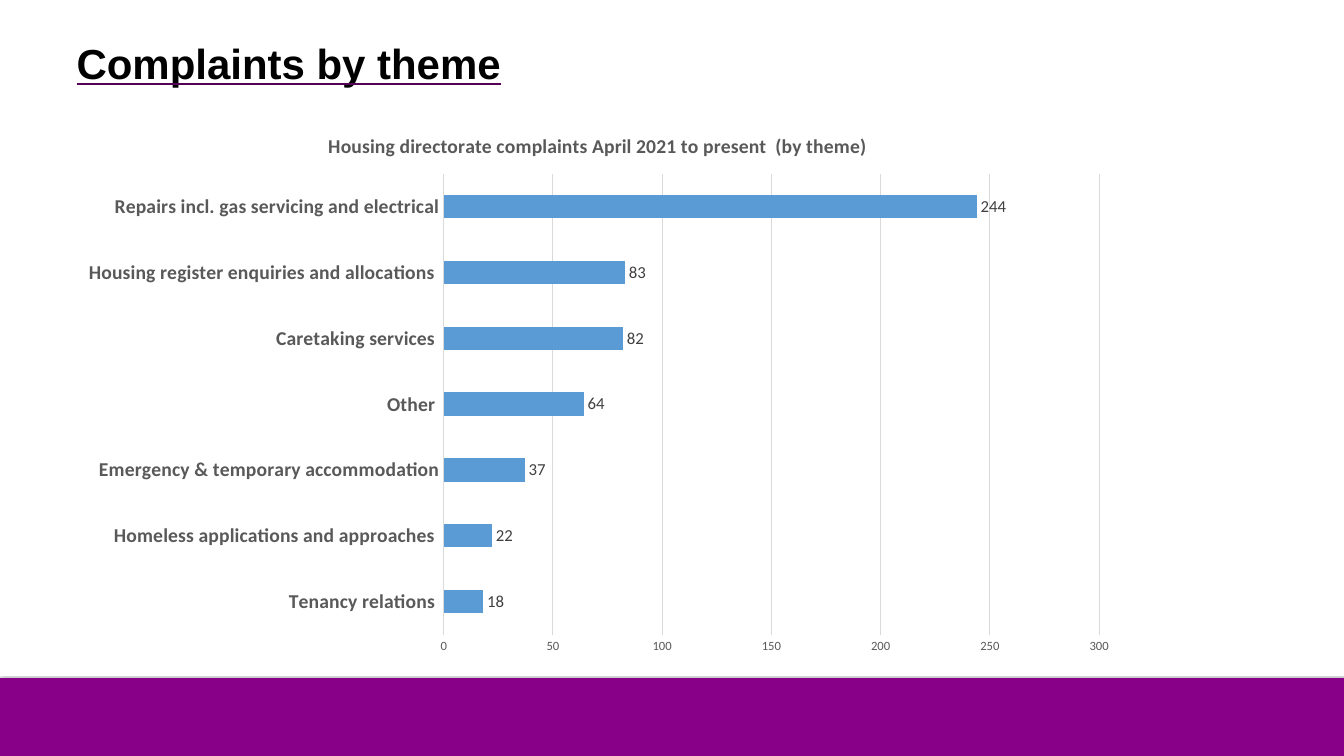
from dataclasses import dataclass

from lxml import etree
from pptx import Presentation, util as u
from pptx.chart.data import CategoryChartData
from pptx.dml.color import RGBColor
from pptx.enum import chart as ch, shapes, text
from pptx.oxml import parse_xml
from pptx.oxml.ns import qn

DRAWING = 'xmlns:a="http://schemas.openxmlformats.org/drawingml/2006/main"'
CHART = 'xmlns:c="http://schemas.openxmlformats.org/drawingml/2006/chart"'


@dataclass(frozen=True)
class Theme:
    heading_font: str = "Arial"
    chart_font: str = "Calibri"
    heading: str = "000000"
    underline: str = "550055"
    band: str = "880088"
    bar: str = "5B9BD5"
    label: str = "595959"
    value: str = "404040"
    grid: str = "D9D9D9"
    heading_size: int = 30
    theme_size: int = 14
    value_size: int = 12
    base_size: int = 10
    scale_size: int = 9


THEME = Theme()

COMPLAINTS = [
    ("Tenancy relations ", 18),
    ("Homeless applications and approaches ", 22),
    ("Emergency & temporary accommodation", 37),
    ("Other ", 64),
    ("Caretaking services ", 82),
    ("Housing register enquiries and allocations ", 83),
    ("Repairs incl. gas servicing and electrical", 244),
]


def set_font(font, name, size, colour, bold=False):
    font.name, font.size, font.bold = name, u.Pt(size), bold
    font.color.rgb = RGBColor.from_string(colour)


def set_line(line, colour):
    line.color.rgb = RGBColor.from_string(colour)
    line.width = u.Pt(0.75)


def add_footer_band(slide, left, top, width, height):
    band = slide.shapes.add_shape(shapes.MSO_SHAPE.RECTANGLE, left, top, width, height)
    band.fill.solid()
    band.fill.fore_color.rgb = RGBColor.from_string(THEME.band)
    band.line.fill.background()
    # Soft shadow along the edge of the band
    band.shadow.inherit = False
    effects = band._element.spPr.find(qn("a:effectLst"))
    effects.append(parse_xml(
        f'<a:outerShdw {DRAWING} blurRad="12700" dist="0" dir="5400000" rotWithShape="0">'
        '<a:srgbClr val="000000"><a:alpha val="50000"/></a:srgbClr></a:outerShdw>'))


def add_heading(slide, left, top, width, height):
    frame = slide.shapes.add_textbox(left, top, width, height).text_frame
    frame.word_wrap = True
    frame.vertical_anchor = text.MSO_ANCHOR.MIDDLE
    heading = frame.paragraphs[0]
    heading.line_spacing = 0.9
    # The underline runs on to a tab stop just past the words
    stops = etree.SubElement(heading._p.get_or_add_pPr(), qn("a:tabLst"))
    etree.SubElement(stops, qn("a:tab"), pos=str(u.Cm(11.3)), algn="l")
    for words in ("Complaints by theme", "\t"):
        run = heading.add_run()
        run.text = words
        set_font(run.font, THEME.heading_font, THEME.heading_size, THEME.heading, True)
        run.font.underline = True
        run.font._element.find(qn("a:latin")).addprevious(parse_xml(
            f'<a:uFill {DRAWING}><a:solidFill><a:srgbClr val="{THEME.underline}"/>'
            '</a:solidFill></a:uFill>'))


def add_complaints_chart(slide, left, top, width, height):
    complaints = CategoryChartData()
    complaints.categories = [theme for theme, _ in COMPLAINTS]
    complaints.add_series("Series 1", [count for _, count in COMPLAINTS])
    chart = slide.shapes.add_chart(
        ch.XL_CHART_TYPE.BAR_CLUSTERED, left, top, width, height, complaints).chart
    set_font(chart.font, THEME.chart_font, THEME.base_size, THEME.heading)
    chart.has_legend = False

    # Chart title
    chart.has_title = True
    caption = chart.chart_title.text_frame.paragraphs[0].add_run()
    caption.text = "Housing directorate complaints April 2021 to present  (by theme)"
    set_font(caption.font, THEME.chart_font, THEME.theme_size, THEME.label, True)
    chart.chart_title.include_in_layout = False

    # Themes down the side, counts along the bottom
    themes, counts = chart.category_axis, chart.value_axis
    for axis in (themes, counts):
        axis.major_tick_mark = axis.minor_tick_mark = ch.XL_TICK_MARK.NONE
    set_font(themes.tick_labels.font, THEME.chart_font, THEME.theme_size, THEME.label, True)
    set_font(counts.tick_labels.font, THEME.chart_font, THEME.scale_size, THEME.label)
    set_line(themes.format.line, THEME.grid)
    counts.format.line.fill.background()
    counts.has_major_gridlines = True
    set_line(counts.major_gridlines.format.line, THEME.grid)
    counts.minimum_scale, counts.maximum_scale, counts.major_unit = 0, 300, 50

    # Bars and their values
    plot = chart.plots[0]
    plot.gap_width = 182
    plot.vary_by_categories = False
    bars = plot.series[0]
    bars.format.fill.solid()
    bars.format.fill.fore_color.rgb = RGBColor.from_string(THEME.bar)
    values = bars.data_labels
    values.show_value = True
    values.position = ch.XL_LABEL_POSITION.OUTSIDE_END
    set_font(values.font, THEME.chart_font, THEME.value_size, THEME.value)

    # Fixed plot area, as shares of the chart
    area = chart._chartSpace.chart.plotArea
    for layout in area.findall(qn("c:layout")):
        area.remove(layout)
    places = "".join(f'<c:{key} val="{share}"/>' for key, share in
                     (("x", 0.355), ("y", 0.112), ("w", 0.617), ("h", 0.833)))
    area.insert(0, parse_xml(
        f'<c:layout {CHART}><c:manualLayout><c:layoutTarget val="inner"/>'
        f'<c:xMode val="edge"/><c:yMode val="edge"/>{places}</c:manualLayout></c:layout>'))


def main():
    deck = Presentation()
    deck.slide_width, deck.slide_height = u.Cm(33.87), u.Cm(19.05)
    slide = deck.slides.add_slide(deck.slide_layouts[6])
    margin = u.Cm(1.68)
    add_footer_band(slide, 0, u.Cm(17.09), deck.slide_width, u.Cm(2))
    add_heading(slide, margin, u.Cm(0.48), u.Cm(29.21), u.Cm(2.34))
    add_complaints_chart(slide, margin, u.Cm(2.82), u.Cm(26.77), u.Cm(13.94))
    deck.save("out.pptx")


if __name__ == "__main__":
    main()
